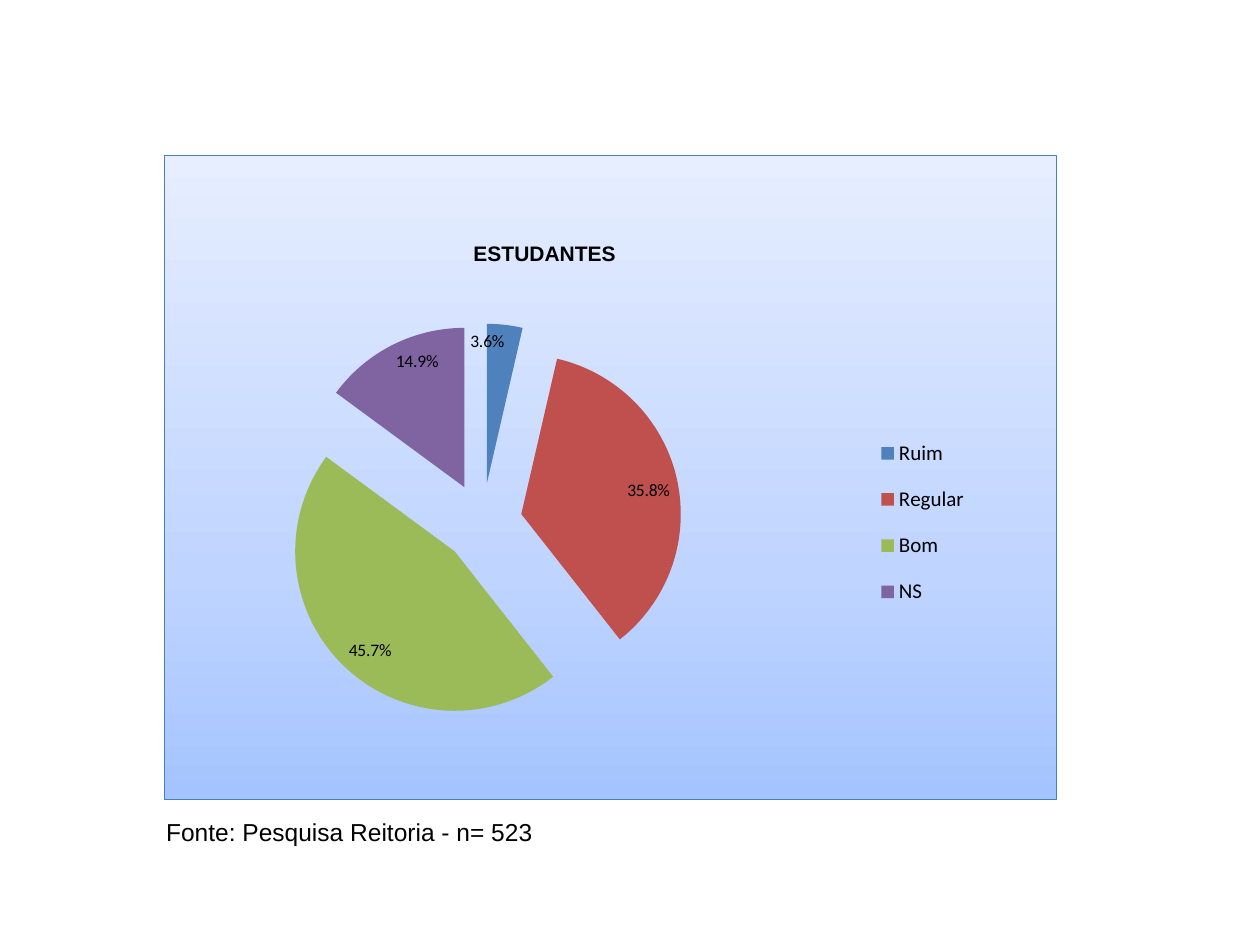
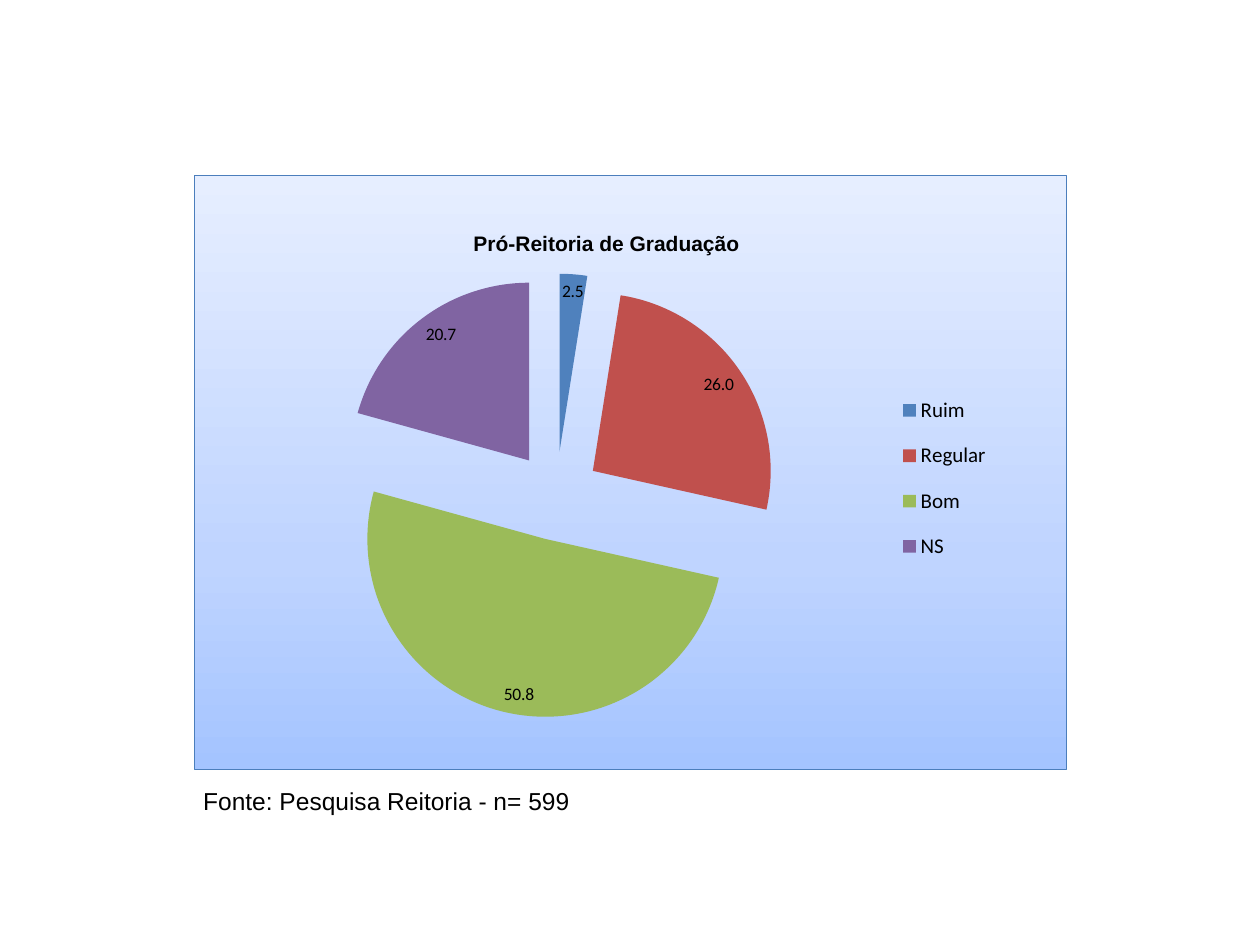
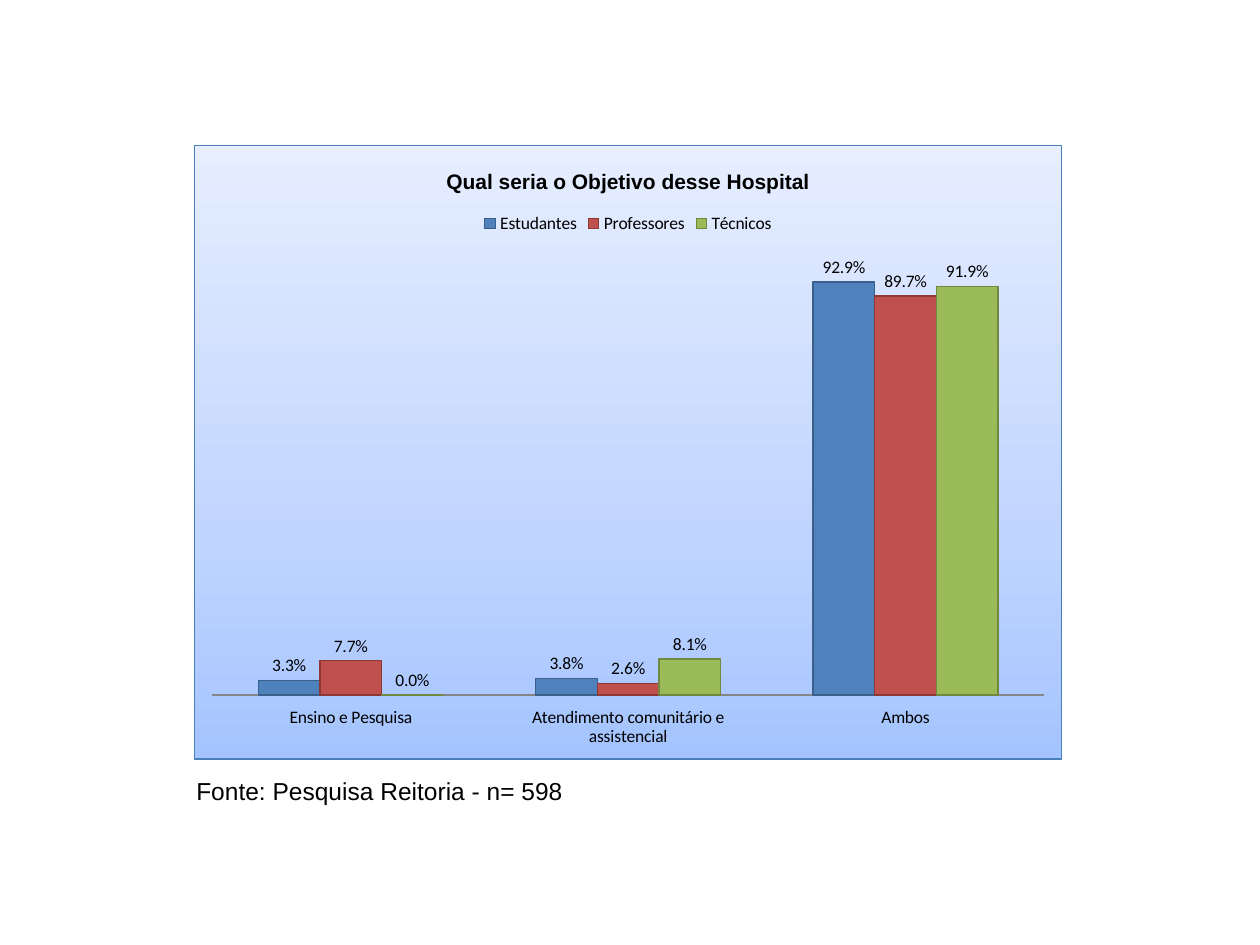
from dataclasses import dataclass

from pptx import Presentation
from pptx.chart.chart import Chart
from pptx.chart.data import CategoryChartData
from pptx.dml.color import RGBColor
from pptx.enum.chart import (XL_CHART_TYPE, XL_LABEL_POSITION,
                             XL_LEGEND_POSITION, XL_TICK_LABEL_POSITION,
                             XL_TICK_MARK)
from pptx.enum.text import MSO_ANCHOR, MSO_AUTO_SIZE, PP_ALIGN
from pptx.oxml import parse_xml
from pptx.oxml.ns import nsdecls
from pptx.slide import Slide
from pptx.util import Inches, Pt

BLACK = RGBColor(0x00, 0x00, 0x00)
GREY = RGBColor(0x86, 0x86, 0x86)
BLUE = RGBColor(0x4F, 0x81, 0xBD)
RED = RGBColor(0xC0, 0x50, 0x4D)
GREEN = RGBColor(0x9B, 0xBB, 0x59)
PURPLE = RGBColor(0x80, 0x64, 0xA2)
EDGE = RGBColor(0x4B, 0x7E, 0xBC)
FILLS = (BLUE, RED, GREEN, PURPLE)
BAR_EDGES = (RGBColor(0x3A, 0x5F, 0x8B), RGBColor(0x8C, 0x38, 0x36),
             RGBColor(0x71, 0x89, 0x3F))
STOPS = ((0, RGBColor(0xA4, 0xC4, 0xFF)), (35, RGBColor(0xBF, 0xD4, 0xFF)),
         (100, RGBColor(0xE6, 0xEE, 0xFF)))

HEAD_FONT = "Arial"
BODY_FONT = "Calibri"
PERCENT = "###0.0%"
RATINGS = ("Ruim", "Regular", "Bom", "NS")
GOALS = ("Ensino e Pesquisa", "Atendimento comunitário e assistencial", "Ambos")
GROUPS = {
    "Estudantes": (0.033, 0.038, 0.929),
    "Professores": (0.077, 0.026, 0.897),
    "Técnicos": (0, 0.081, 0.919),
}

Box = tuple[float, float, float, float]


@dataclass(frozen=True)
class Label:
    text: str
    box: Box
    size: int = 14
    bold: bool = False
    wrap: bool = True
    align: PP_ALIGN = PP_ALIGN.LEFT
    anchor: MSO_ANCHOR = MSO_ANCHOR.TOP


@dataclass(frozen=True)
class Pie:
    box: Box
    plot: Box
    legend: Box
    values: tuple[float, ...]
    format: str
    title: Label
    source: Label


PIES = (
    Pie((1.3, 1.23, 7.09, 5.12), (0.133, 0.261, 0.447, 0.619),
        (0.77, 0.41, 0.16, 0.32), (0.036, 0.358, 0.457, 0.149), PERCENT,
        Label("ESTUDANTES", (3.66, 1.86, 1.5, 0.39), 12, True, False),
        Label("Fonte: Pesquisa Reitoria - n= 523", (1.22, 6.43, 3.46, 0.34),
              align=PP_ALIGN.JUSTIFY, anchor=MSO_ANCHOR.MIDDLE)),
    Pie((1.54, 1.39, 6.93, 4.72), (0.157, 0.165, 0.515, 0.749),
        (0.78, 0.34, 0.16, 0.34), (2.5, 26, 50.8, 20.7), "###0.0",
        Label("Pró-Reitoria de Graduação", (3.66, 1.78, 2.56, 0.55),
              12, True, False),
        Label(" Fonte: Pesquisa Reitoria - n= 599", (1.46, 6.19, 3.18, 0.34),
              wrap=False)),
)
BAR_BOX = (1.54, 1.15, 6.89, 4.88)
BAR_SOURCE = Label("Fonte: Pesquisa Reitoria - n= 598", (1.46, 6.11, 3.2, 0.34))


def style(font, size: int, name: str, bold: bool = False) -> None:
    font.size = Pt(size)
    font.name = name
    font.bold = bold
    font.color.rgb = BLACK


def add_label(slide: Slide, label: Label) -> None:
    frame = slide.shapes.add_textbox(*map(Inches, label.box)).text_frame
    frame.word_wrap = label.wrap
    frame.vertical_anchor = label.anchor
    if not label.bold:
        frame.auto_size = MSO_AUTO_SIZE.SHAPE_TO_FIT_TEXT
    para = frame.paragraphs[0]
    para.alignment = label.align
    run = para.add_run()
    run.text = label.text
    style(run.font, label.size, HEAD_FONT, label.bold)


def add_panel(chart: Chart) -> None:
    """Give the chart area its gradient and thin border."""
    stops = "".join(f'<a:gs pos="{pos * 1000}"><a:srgbClr val="{color}"/></a:gs>'
                    for pos, color in STOPS)
    panel = parse_xml(
        f'<c:spPr {nsdecls("c", "a")}>'
        f'<a:gradFill rotWithShape="1"><a:gsLst>{stops}</a:gsLst>'
        f'<a:lin ang="{270 * 60000}" scaled="0"/></a:gradFill>'
        f'<a:ln w="{Pt(0.75)}"><a:solidFill><a:srgbClr val="{EDGE}"/>'
        f'</a:solidFill></a:ln></c:spPr>')
    chart.element.xpath("./c:chart")[0].addnext(panel)


def set_layout(chart: Chart, part: str, index: int, box: Box,
               inner: bool = False) -> None:
    """Place a chart part by fractions of the chart area."""
    node = chart.element.xpath(f".//c:{part}")[0]
    for old in node.xpath("./c:layout"):
        node.remove(old)
    target = '<c:layoutTarget val="inner"/>' if inner else ""
    modes = "".join(f'<c:{axis}Mode val="edge"/>' for axis in "xy")
    sizes = "".join(f'<c:{key} val="{val}"/>' for key, val in zip("xywh", box))
    node.insert(index, parse_xml(
        f'<c:layout {nsdecls("c")}><c:manualLayout>{target}{modes}{sizes}'
        f'</c:manualLayout></c:layout>'))


def add_chart(slide: Slide, kind: XL_CHART_TYPE, box: Box, cats: tuple[str, ...],
              rows: dict[str, tuple[float, ...]], code: str,
              spot: XL_LABEL_POSITION, side: XL_LEGEND_POSITION) -> Chart:
    data = CategoryChartData(number_format=code)
    data.categories = cats
    for name, values in rows.items():
        data.add_series(name, values)
    chart = slide.shapes.add_chart(kind, *map(Inches, box), data).chart
    style(chart.font, 10, BODY_FONT)
    chart.has_title = False
    chart.has_legend = True
    chart.legend.position = side
    chart.legend.include_in_layout = False
    for series in chart.plots[0].series:
        labels = series.data_labels
        labels.show_value = True
        labels.number_format = code
        labels.number_format_is_linked = False
        labels.position = spot
    add_panel(chart)
    return chart


def add_pie(slide: Slide, pie: Pie) -> None:
    chart = add_chart(slide, XL_CHART_TYPE.PIE, pie.box, RATINGS,
                      {"Series 1": pie.values}, pie.format,
                      XL_LABEL_POSITION.INSIDE_END, XL_LEGEND_POSITION.RIGHT)
    style(chart.legend.font, 12, BODY_FONT)
    chart.plots[0].vary_by_categories = True
    series = chart.plots[0].series[0]
    series.format.fill.solid()
    series.format.fill.fore_color.rgb = BLUE
    for index, color in enumerate(FILLS):
        fill = series.points[index].format.fill
        fill.solid()
        fill.fore_color.rgb = color
    chart.element.xpath(".//c:ser/c:spPr")[0].addnext(
        parse_xml(f'<c:explosion {nsdecls("c")} val="25"/>'))
    set_layout(chart, "plotArea", 0, pie.plot, inner=True)
    set_layout(chart, "legend", 1, pie.legend)
    add_label(slide, pie.title)
    add_label(slide, pie.source)


def add_bars(slide: Slide) -> None:
    chart = add_chart(slide, XL_CHART_TYPE.COLUMN_CLUSTERED, BAR_BOX, GOALS,
                      GROUPS, PERCENT, XL_LABEL_POSITION.OUTSIDE_END,
                      XL_LEGEND_POSITION.TOP)
    chart.has_title = True
    run = chart.chart_title.text_frame.paragraphs[0].add_run()
    run.text = "Qual seria o Objetivo desse Hospital"
    style(run.font, 12, HEAD_FONT, True)
    plot = chart.plots[0]
    plot.gap_width = 150
    plot.overlap = 0
    plot.vary_by_categories = False
    for series, color, edge in zip(plot.series, FILLS, BAR_EDGES):
        look = series.format
        look.fill.solid()
        look.fill.fore_color.rgb = color
        look.line.color.rgb = edge
        look.line.width = Pt(0.75)
    axis = chart.category_axis
    axis.major_tick_mark = XL_TICK_MARK.NONE
    axis.tick_label_position = XL_TICK_LABEL_POSITION.LOW
    axis.format.line.color.rgb = GREY
    scale = chart.value_axis
    scale.minimum_scale = 0
    scale.maximum_scale = 1
    scale.has_major_gridlines = False
    scale.tick_labels.number_format = PERCENT
    scale.tick_labels.number_format_is_linked = False
    scale.visible = False
    add_label(slide, BAR_SOURCE)


def main() -> None:
    deck = Presentation()
    deck.slide_width = Inches(10)
    deck.slide_height = Inches(7.5)
    blank = deck.slide_layouts[6]
    for pie in PIES:
        add_pie(deck.slides.add_slide(blank), pie)
    add_bars(deck.slides.add_slide(blank))
    deck.save("out.pptx")


if __name__ == "__main__":
    main()
